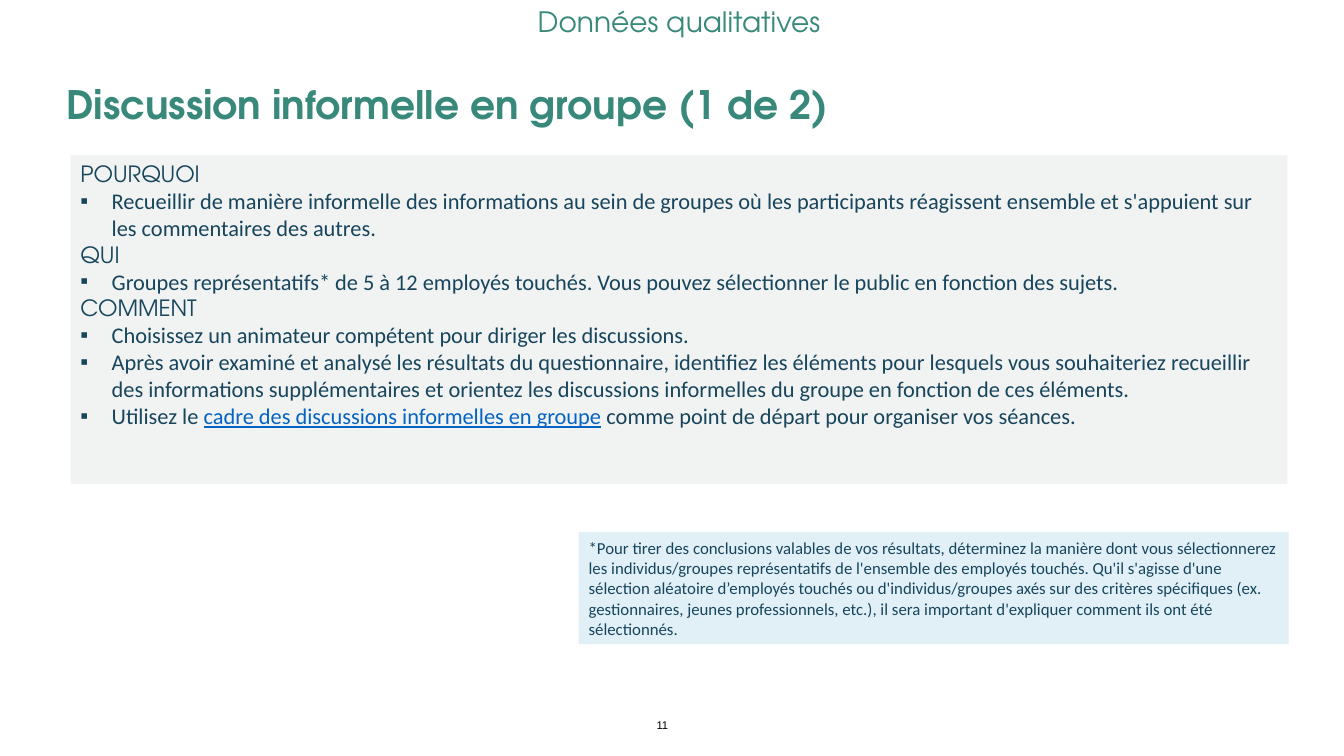
"""Build the slide on informal group discussions."""
from lxml.etree import SubElement
from pptx import Presentation
from pptx.dml.color import RGBColor
from pptx.enum.shapes import MSO_SHAPE
from pptx.enum.text import MSO_ANCHOR, PP_ALIGN
from pptx.oxml.ns import qn
from pptx.util import Inches, Pt

COLORS = {"green": "388979", "navy": "17455C", "link": "0563C1",
          "gray": "F1F2F2", "sky": "E1F0F7", "black": "000000"}
DISPLAY, BODY = "TeX Gyre Adventor", "Calibri"
LINK_TEXT = "cadre des discussions informelles en groupe"
SECTIONS = {
    "POURQUOI": [
        "Recueillir de manière informelle des informations au sein de groupes où les "
        "participants réagissent ensemble et s'appuient sur les commentaires des autres."],
    "QUI": [
        "Groupes représentatifs* de 5 à 12 employés touchés. Vous pouvez sélectionner "
        "le public en fonction des sujets."],
    "COMMENT": [
        "Choisissez un animateur compétent pour diriger les discussions.",
        "Après avoir examiné et analysé les résultats du questionnaire, identifiez les "
        "éléments pour lesquels vous souhaiteriez recueillir des informations "
        "supplémentaires et orientez les discussions informelles du groupe en fonction "
        "de ces éléments.",
        f"Utilisez le {LINK_TEXT} comme point de départ pour organiser vos séances."],
}
FOOTNOTE = (
    "*Pour tirer des conclusions valables de vos résultats, déterminez la manière dont "
    "vous sélectionnerez les individus/groupes représentatifs de l'ensemble des employés "
    "touchés. Qu'il s'agisse d'une sélection aléatoire d’employés touchés ou "
    "d'individus/groupes axés sur des critères spécifiques (ex. gestionnaires, jeunes "
    "professionnels, etc.), il sera important d'expliquer comment ils ont été sélectionnés.")


def rgb(name):
    return RGBColor.from_string(COLORS[name])


def add_bullet(paragraph, indent=Inches(0.31)):
    properties = paragraph._p.get_or_add_pPr()
    properties.set("marL", str(indent))
    properties.set("indent", str(-indent))
    SubElement(properties, qn("a:buFont"), typeface="Arial")
    SubElement(properties, qn("a:buChar"), char="▪")


def write(paragraph, text, size=16, font=BODY, color="navy", bold=False,
          underline=False, align=PP_ALIGN.LEFT, line_spacing=None):
    """Add a formatted run to a paragraph."""
    paragraph.alignment = align
    if line_spacing:
        paragraph.line_spacing = line_spacing
    run = paragraph.add_run()
    run.text = text
    run.font.size, run.font.name = Pt(size), font
    run.font.bold, run.font.underline = bold, underline
    run.font.color.rgb = rgb(color)


def add_frame(slide, box, fill=None, anchor=MSO_ANCHOR.TOP):
    """Add a text area, on a filled panel if a fill is given."""
    place = [Inches(length) for length in box]
    if fill:
        panel = slide.shapes.add_shape(MSO_SHAPE.RECTANGLE, *place)
        panel.shadow.inherit = False
        panel.fill.solid()
        panel.fill.fore_color.rgb = rgb(fill)
        panel.line.fill.background()
    else:
        panel = slide.shapes.add_textbox(*place)
    frame = panel.text_frame
    frame.word_wrap = True
    frame.vertical_anchor = anchor
    return frame


def write_sections(frame):
    lines = [(text, is_bullet) for heading, bullets in SECTIONS.items()
             for text, is_bullet in [(heading, False), *((b, True) for b in bullets)]]
    for index, (text, is_bullet) in enumerate(lines):
        paragraph = frame.add_paragraph() if index else frame.paragraphs[0]
        if not is_bullet:
            write(paragraph, text, font=DISPLAY)
            continue
        add_bullet(paragraph)
        before, link, after = text.partition(LINK_TEXT)
        write(paragraph, before)
        if link:
            write(paragraph, link, color="link", underline=True)
            write(paragraph, after)


def main():
    deck = Presentation()
    deck.slide_width, deck.slide_height = Inches(13.33), Inches(7.5)
    slide = deck.slides.add_slide(deck.slide_layouts[6])

    page_number = add_frame(slide, (6.37, 7.06, 0.4, 0.27), anchor=MSO_ANCHOR.MIDDLE)
    write(page_number.paragraphs[0], "11", size=8, font="Arial", color="black",
          align=PP_ALIGN.CENTER)
    title = add_frame(slide, (0.56, 0.6, 12.38, 0.91), anchor=MSO_ANCHOR.MIDDLE)
    write(title.paragraphs[0], "Discussion informelle en groupe (1 de 2)", size=28,
          font=DISPLAY, color="green", bold=True, line_spacing=0.9)
    topic = add_frame(slide, (5.2, 0, 3.07, 0.44))
    write(topic.paragraphs[0], "Données qualitatives", size=20, font=DISPLAY,
          color="green", align=PP_ALIGN.CENTER)
    write_sections(add_frame(slide, (0.7, 1.54, 12.07, 3.26), fill="gray"))
    footnote = add_frame(slide, (5.74, 5.28, 7.04, 1.11), fill="sky",
                         anchor=MSO_ANCHOR.MIDDLE)
    write(footnote.paragraphs[0], FOOTNOTE, size=12)
    deck.save("out.pptx")


if __name__ == "__main__":
    main()
